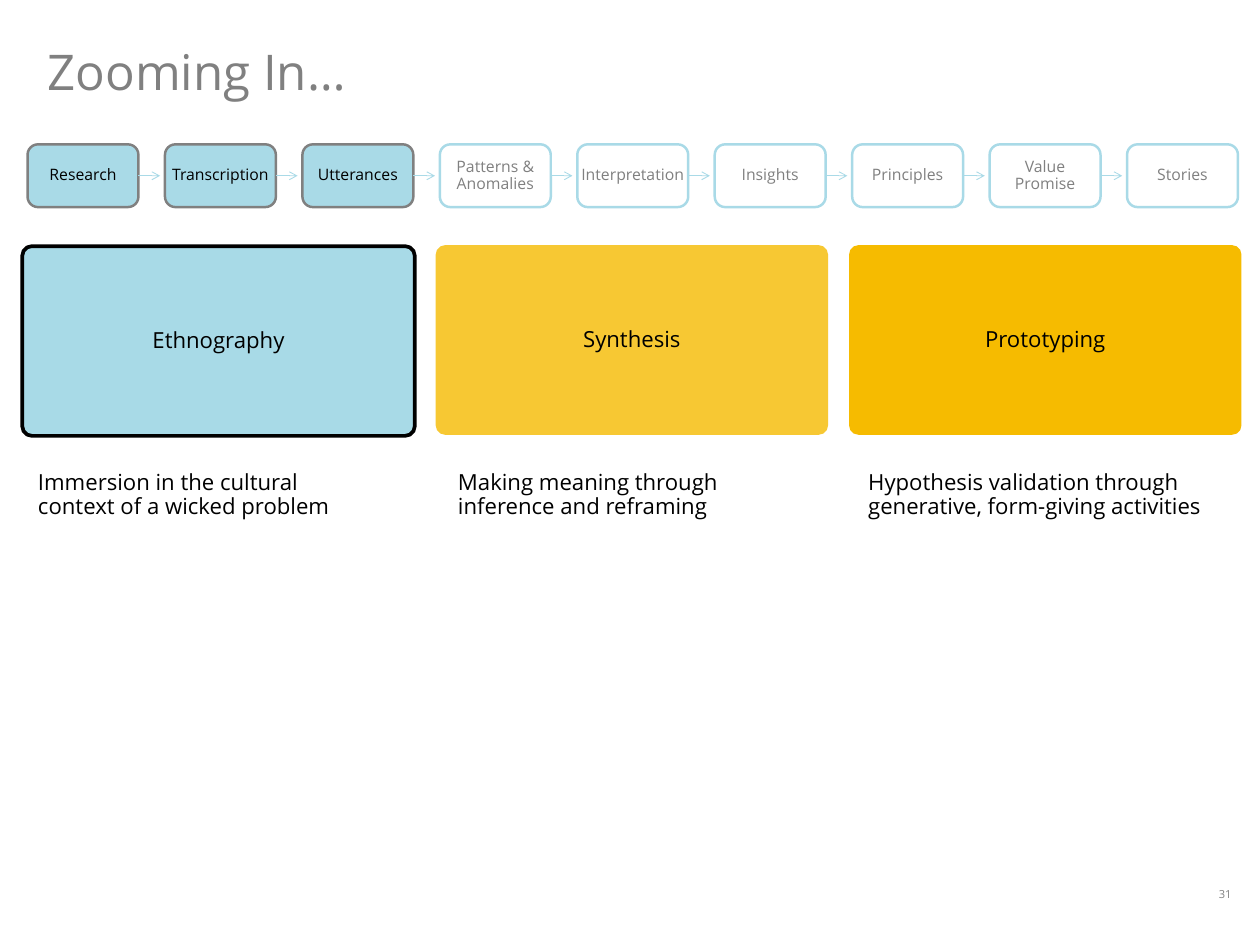
"""Build the "Zooming In…" slide with its process steps and three phases."""
import pptx
import pptx.util
import pptx.dml.color
import pptx.enum.shapes
import pptx.enum.text
import pptx.oxml
import pptx.oxml.ns

Cm = pptx.util.Cm
Pt = pptx.util.Pt
Kind = pptx.enum.shapes.MSO_SHAPE
Link = pptx.enum.shapes.MSO_CONNECTOR
Align = pptx.enum.text.PP_ALIGN
Anchor = pptx.enum.text.MSO_ANCHOR
Fit = pptx.enum.text.MSO_AUTO_SIZE

HUES = {
    "grey": "808080", "black": "000000", "white": "FFFFFF",
    "pale": "A9DAE7", "teal": "6FC2D7", "gold": "F6BB00",
}


def tag(name, **attrs):
    node = pptx.oxml.parse_xml(f"<a:{name} {pptx.oxml.ns.nsdecls('a')}/>")
    for key, value in attrs.items():
        node.set(key, value)
    return node


class Deck:
    font = "Open Sans"
    space = 0.9

    def __init__(self, slide):
        self.slide = slide

    def hue(self, name):
        return pptx.dml.color.RGBColor.from_string(HUES[name])

    def fill_text(self, shape, text, size, color, align, anchor, pads):
        frame = shape.text_frame
        frame.text = text
        frame.word_wrap = True
        frame.vertical_anchor = anchor
        frame.margin_left = frame.margin_right = Cm(pads[0])
        frame.margin_top = frame.margin_bottom = Cm(pads[1])
        for para in frame.paragraphs:
            para.alignment = align
            para.line_spacing = self.space
            for run in para.runs:
                run.font.name = self.font
                run.font.size = Pt(size)
                run.font.color.rgb = self.hue(color)

    def label(self, text, left, top, width, height, size, color="black",
              align=Align.LEFT, anchor=Anchor.TOP, pads=(0.25, 0.13), grow=True):
        box = self.slide.shapes.add_textbox(Cm(left), Cm(top), Cm(width), Cm(height))
        self.fill_text(box, text, size, color, align, anchor, pads)
        box.text_frame.auto_size = Fit.SHAPE_TO_FIT_TEXT if grow else Fit.NONE

    def card(self, text, left, top, width, height, size, color, fill,
             line=None, weight=2, alpha=100, bend=None, pads=(0.25, 0.13)):
        box = self.slide.shapes.add_shape(
            Kind.ROUNDED_RECTANGLE, Cm(left), Cm(top), Cm(width), Cm(height))
        box.shadow.inherit = False
        if bend is not None:
            box.adjustments[0] = bend
        box.fill.solid()
        box.fill.fore_color.rgb = self.hue(fill)
        if alpha < 100:
            tone = box._element.spPr.find(".//" + pptx.oxml.ns.qn("a:srgbClr"))
            tone.append(tag("alpha", val=str(alpha * 1000)))
        if line:
            box.line.color.rgb = self.hue(line)
            box.line.width = Pt(weight)
        else:
            box.line.fill.background()
        self.fill_text(box, text, size, color, Align.CENTER, Anchor.MIDDLE, pads)
        return box

    def arrow(self, start, length, color):
        left = start.left + start.width
        mid = start.top + start.height // 2
        line = self.slide.shapes.add_connector(
            Link.STRAIGHT, left, mid, left + Cm(length), mid)
        line.begin_connect(start, 3)
        line.line.color.rgb = self.hue(color)
        line.line.width = Pt(0.75)
        line._element.spPr.find(pptx.oxml.ns.qn("a:ln")).append(
            tag("tailEnd", type="arrow"))
        line._element.spPr.append(tag("effectLst"))


def main():
    show = pptx.Presentation()
    show.slide_width = Cm(36.12)
    show.slide_height = Cm(27.1)
    deck = Deck(show.slides.add_slide(show.slide_layouts[6]))

    deck.label("Zooming In…", 1.37, 1.3, 32.18, 1.7, 40, "grey",
               anchor=Anchor.MIDDLE, pads=(0, 0))
    deck.label("31", 34.47, 25.35, 1.3, 0.76, 9, "grey", Align.CENTER, grow=False)

    steps = ["Research", "Transcription", "Utterances", "Patterns & Anomalies",
             "Interpretation", "Insights", "Principles", "Value\vPromise", "Stories"]
    done = 3
    for i, step in enumerate(steps):
        color, fill, line = (("black", "pale", "grey") if i < done
                             else ("grey", "white", "pale"))
        box = deck.card(step, 0.79 + 3.94 * i, 4.14, 3.18, 1.8, 12.8,
                        color, fill, line, pads=(0, 0.13))
        if i < len(steps) - 1:
            deck.arrow(box, 0.62, "pale")

    phases = [
        ("Ethnography", 7.06, "teal", 60, "black", 0.84,
         "Immersion in the cultural context of a wicked problem"),
        ("Synthesis", 7.03, "gold", 80, None, 12.88,
         "Making meaning through inference and reframing"),
        ("Prototyping", 7.03, "gold", 100, None, 24.64,
         "Hypothesis validation through generative, form-giving activities"),
    ]
    for i, (name, top, fill, alpha, line, left, note) in enumerate(phases):
        deck.card(name, 0.64 + 11.85 * i, top, 11.25, 5.44, 18, "black", fill,
                  line, 3, alpha, 0.05)
        deck.label(note, left, 13.39, 10.21, 1.8, 18)

    show.save("out.pptx")


if __name__ == "__main__":
    main()
